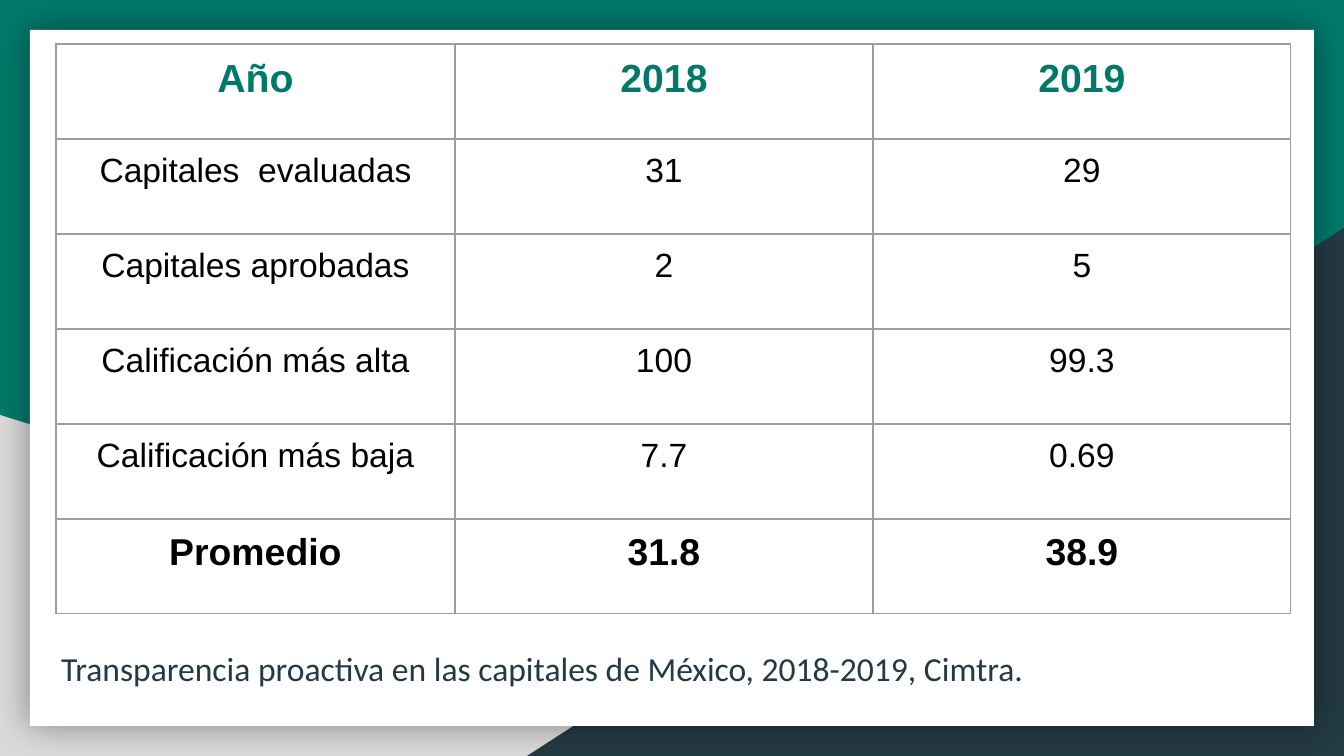
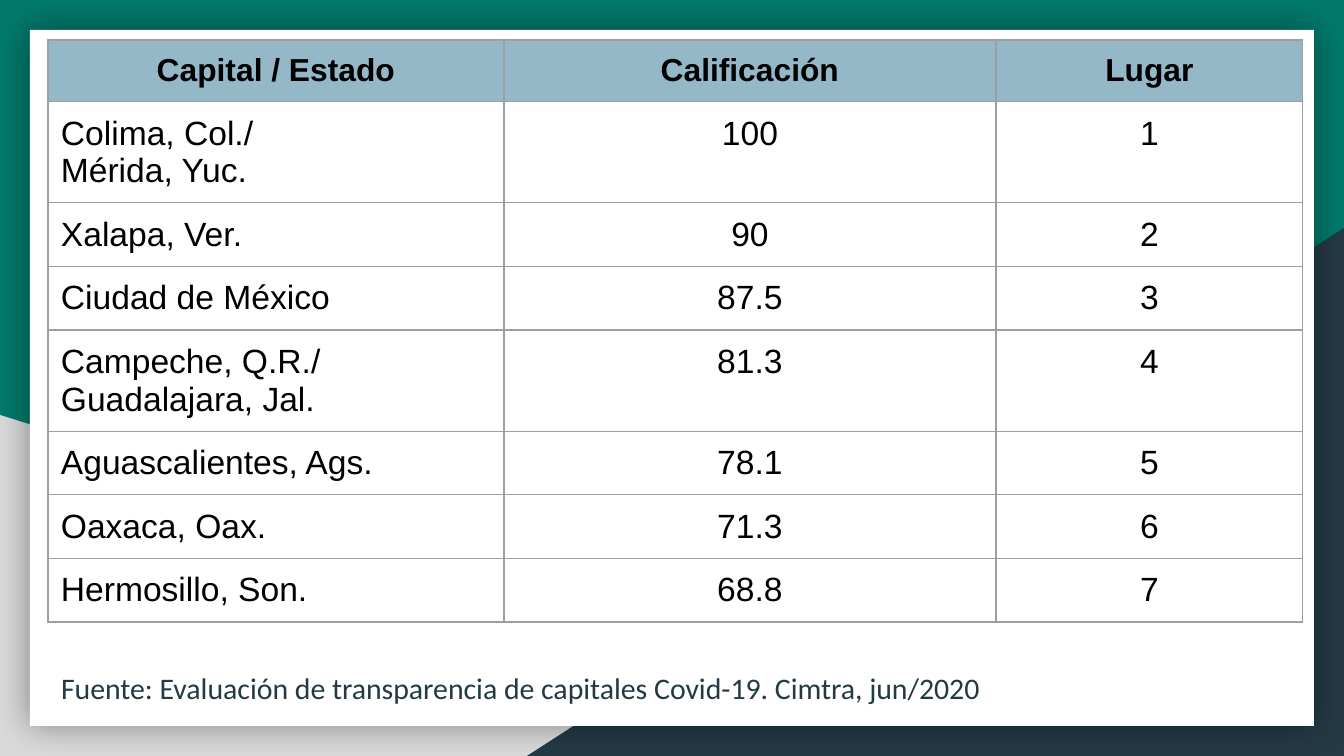
from typing import NamedTuple

from lxml.etree import SubElement as Sub
from pptx import Presentation
from pptx.dml.color import RGBColor as Rgb
from pptx.enum.shapes import MSO_SHAPE as Kind
from pptx.enum.text import MSO_ANCHOR as Anchor, MSO_AUTO_SIZE as Fit, PP_ALIGN as Align
from pptx.oxml import parse_xml
from pptx.oxml.ns import nsdecls, qn
from pptx.util import Pt

SCALE = 914400 / 134.4  # EMU in one px
INSET = 13
COLS = {
    "green": "00796B", "slate": "233A44", "gray": "D9D9D9", "white": "FFFFFF",
    "black": "000000", "blue": "94B8C8", "rule": "9E9E9E",
}


class Box(NamedTuple):
    x: int
    y: int
    w: int
    h: int


class Part(NamedTuple):
    kind: Kind
    box: Box
    fill: str
    flip: bool = False
    glow: bool = False


class Style(NamedTuple):
    size: int
    color: str = "black"
    bold: bool = False
    face: str = "Arial"
    fill: str = ""


class Grid(NamedTuple):
    box: Box
    cols: list[int]
    row: int
    rows: list[list[str]]
    body: Style
    marks: dict[int, Style]  # styles of special rows
    left: bool = False  # first column aligned left below the header


class Page(NamedTuple):
    note: str
    spot: Box
    style: Style
    grid: Grid


PARTS = [
    Part(Kind.RIGHT_TRIANGLE, Box(0, 415, 1083, 341), "gray"),
    Part(Kind.RIGHT_TRIANGLE, Box(527, 228, 817, 528), "slate", flip=True),
    Part(Kind.RECTANGLE, Box(30, 30, 1284, 696), "white", glow=True),
]

PAGES = [
    Page(
        "Transparencia proactiva en las capitales de México, 2018-2019, Cimtra.",
        Box(48, 612, 1090, 89),
        Style(18, "slate", face="Calibri"),
        Grid(
            Box(56, 44, 1235, 570), [399, 418, 418], 95,
            [
                ["Año", "2018", "2019"],
                ["Capitales  evaluadas", "31", "29"],
                ["Capitales aprobadas", "2", "5"],
                ["Calificación más alta", "100", "99.3"],
                ["Calificación más baja", "7.7", "0.69"],
                ["Promedio", "31.8", "38.9"],
            ],
            Style(18),
            {0: Style(21, "green", True), 5: Style(20, bold=True)},
        ),
    ),
    Page(
        "Fuente: Evaluación de transparencia de capitales Covid-19. Cimtra, jun/2020",
        Box(48, 656, 1090, 63),
        Style(16, "slate", face="Calibri"),
        Grid(
            Box(48, 40, 1255, 616), [456, 492, 307], 56,
            [
                ["Capital / Estado", "Calificación", "Lugar"],
                ["Colima, Col./\nMérida, Yuc.", "100", "1"],
                ["Xalapa, Ver.", "90", "2"],
                ["Ciudad de México", "87.5", "3"],
                ["Campeche, Q.R./\nGuadalajara, Jal.", "81.3", "4"],
                ["Aguascalientes, Ags.", "78.1", "5"],
                ["Oaxaca, Oax.", "71.3", "6"],
                ["Hermosillo, Son.", "68.8", "7"],
            ],
            Style(18),
            {0: Style(17, bold=True, fill="blue")},
            left=True,
        ),
    ),
]


def px(n: int) -> int:
    return round(n * SCALE)


def rgb(name: str) -> Rgb:
    return Rgb.from_string(COLS[name])


def paint(fill, name: str) -> None:
    fill.solid()
    fill.fore_color.rgb = rgb(name)


def write(frame, text: str, style: Style, align: Align) -> None:
    frame.text = text
    for para in frame.paragraphs:
        para.alignment = align
        for run in para.runs:
            font = run.font
            font.name, font.size, font.bold = style.face, Pt(style.size), style.bold
            font.color.rgb = rgb(style.color)


def pad(item) -> None:
    item.margin_left = item.margin_right = px(INSET)
    item.margin_top = item.margin_bottom = px(INSET)


# Backdrop shared through the layout
def draw(slide, part: Part):
    shape = slide.shapes.add_shape(part.kind, *map(px, part.box))
    paint(shape.fill, part.fill)
    shape.line.fill.background()
    shape.shadow.inherit = False
    props = shape.element.spPr
    if part.flip:
        props.find(qn("a:xfrm")).set("flipH", "1")
    if part.glow:
        props.find(qn("a:effectLst")).append(parse_xml(
            f'<a:outerShdw {nsdecls("a")} blurRad="{Pt(18)}" dist="0" dir="0" '
            f'algn="ctr" rotWithShape="0"><a:srgbClr val="{COLS["black"]}">'
            '<a:alpha val="40000"/></a:srgbClr></a:outerShdw>'))
    return shape


def dress(layout, slide) -> None:
    paint(layout.background.fill, "green")
    for hold in list(layout.placeholders):
        if hold.placeholder_format.idx >= 10:  # date, footer, number
            hold.element.getparent().remove(hold.element)
    for part in PARTS:
        layout.shapes.element.append(draw(slide, part).element)


# Tables
def edge(cell) -> None:
    props = cell._tc.get_or_add_tcPr()
    for i, side in enumerate(("lnL", "lnR", "lnT", "lnB")):
        line = Sub(props, qn(f"a:{side}"), w=str(Pt(0.75)))
        Sub(Sub(line, qn("a:solidFill")), qn("a:srgbClr"), val=COLS["rule"])
        props.insert(i, line)


def table(slide, grid: Grid) -> None:
    frame = slide.shapes.add_table(len(grid.rows), len(grid.cols), *map(px, grid.box))
    tab = frame.table
    tab.first_row = tab.horz_banding = False
    for col, width in zip(tab.columns, grid.cols):
        col.width = px(width)
    for r, texts in enumerate(grid.rows):
        tab.rows[r].height = px(grid.row)
        style = grid.marks.get(r, grid.body)
        for c, text in enumerate(texts):
            cell = tab.cell(r, c)
            pad(cell)
            side = Align.LEFT if grid.left and r and not c else Align.CENTER
            write(cell.text_frame, text, style, side)
            if style.fill:
                paint(cell.fill, style.fill)
            else:
                cell.fill.background()
            edge(cell)
    frame.height = px(grid.box.h)


# Caption in the body placeholder
def caption(slide, page: Page) -> None:
    title = slide.shapes.title.element
    title.getparent().remove(title)
    body = slide.placeholders[1]
    body.left, body.top, body.width, body.height = map(px, page.spot)
    frame = body.text_frame
    pad(frame)
    write(frame, page.note, page.style, Align.LEFT)
    frame.word_wrap = True
    frame.auto_size = Fit.NONE
    frame.vertical_anchor = Anchor.BOTTOM
    frame.paragraphs[0].space_before = Pt(0)


def main() -> None:
    deck = Presentation()
    deck.slide_width, deck.slide_height = px(1344), px(756)
    layout = deck.slide_layouts[2]
    for i, page in enumerate(PAGES):
        slide = deck.slides.add_slide(layout)
        if i == 0:
            dress(layout, slide)
        caption(slide, page)
        table(slide, page.grid)
    deck.save("out.pptx")


if __name__ == "__main__":
    main()
